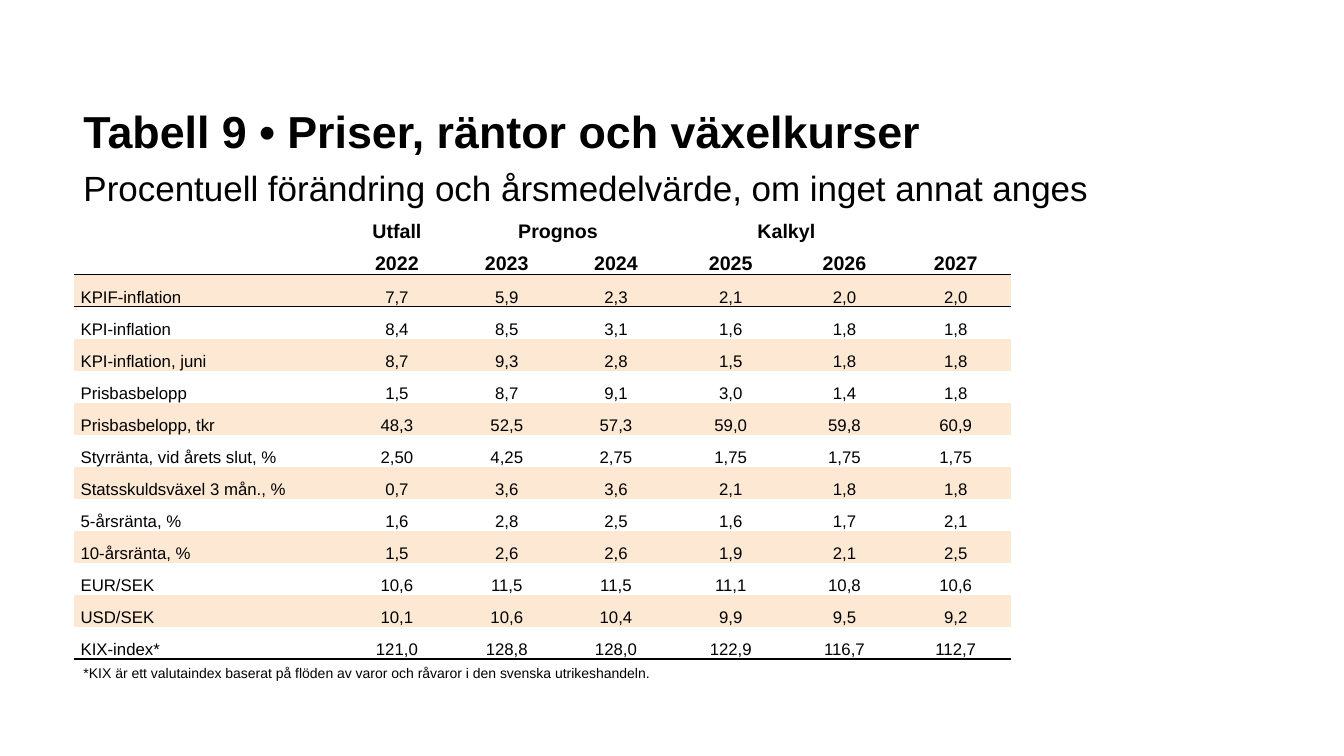
from lxml import etree
from pptx import Presentation
from pptx.dml.color import RGBColor
from pptx.enum import text as te
from pptx.oxml import ns
from pptx.util import Pt

TITLE = "Tabell 9 • Priser, räntor och växelkurser"
SUBTITLE = "Procentuell förändring och årsmedelvärde, om inget annat anges"
FOOTNOTE = ("*KIX är ett valutaindex baserat på flöden av varor och råvaror "
            "i den svenska utrikeshandeln.")
HEADER = [
    ("", "Utfall", "Prognos", "", "Kalkyl", "", ""),
    ("", "2022", "2023", "2024", "2025", "2026", "2027"),
]
BODY = [
    ("KPIF-inflation", "7,7", "5,9", "2,3", "2,1", "2,0", "2,0"),
    ("KPI-inflation", "8,4", "8,5", "3,1", "1,6", "1,8", "1,8"),
    ("KPI-inflation, juni", "8,7", "9,3", "2,8", "1,5", "1,8", "1,8"),
    ("Prisbasbelopp", "1,5", "8,7", "9,1", "3,0", "1,4", "1,8"),
    ("Prisbasbelopp, tkr", "48,3", "52,5", "57,3", "59,0", "59,8", "60,9"),
    ("Styrränta, vid årets slut, %", "2,50", "4,25", "2,75", "1,75", "1,75", "1,75"),
    ("Statsskuldsväxel 3 mån., %", "0,7", "3,6", "3,6", "2,1", "1,8", "1,8"),
    ("5-årsränta, %", "1,6", "2,8", "2,5", "1,6", "1,7", "2,1"),
    ("10-årsränta, %", "1,5", "2,6", "2,6", "1,9", "2,1", "2,5"),
    ("EUR/SEK", "10,6", "11,5", "11,5", "11,1", "10,8", "10,6"),
    ("USD/SEK", "10,1", "10,6", "10,4", "9,9", "9,5", "9,2"),
    ("KIX-index*", "121,0", "128,8", "128,0", "122,9", "116,7", "112,7"),
]
SPANS = (2, 4)  # first column of each two-column heading

BLACK = RGBColor(0, 0, 0)
BAND = RGBColor(0xFD, 0xE9, 0xD3)
FONT = "Arial"
NO_STYLE = "{2D5ABB26-0587-4C30-8999-92F81FD0307C}"

LEFT = 52.56
TABLE_TOP = 150.48
COLUMN_WIDTHS = (190, 82, 75, 81, 83, 79.5, 79.5)
ROW_HEIGHT = 22.89
CELL_MARGIN = 5.04
PROGNOS_MARGIN = 12.8  # wider on the right, moves the heading left


def set_font(font, size, bold=False):
    font.name, font.size, font.bold = FONT, Pt(size), bold
    font.color.rgb = BLACK


def add_rule(cell, side):
    """Draw a 1 pt black border on one side of a cell: "T" or "B"."""
    line = etree.Element(ns.qn(f"a:ln{side}"), w=str(Pt(1)))
    fill = etree.SubElement(line, ns.qn("a:solidFill"))
    etree.SubElement(fill, ns.qn("a:srgbClr"), val=str(BLACK))
    cell._tc.get_or_add_tcPr().insert(0, line)


def add_title(slide):
    frame = slide.shapes.add_textbox(
        Pt(LEFT), Pt(59.04), Pt(756.72), Pt(97.2)).text_frame
    frame.word_wrap = True
    frame.vertical_anchor = te.MSO_ANCHOR.MIDDLE
    heading = frame.paragraphs[0]
    heading.line_spacing = 1.2
    heading.space_after = Pt(4)
    title = heading.add_run()
    title.text = TITLE
    set_font(title.font, 32, True)
    heading.add_line_break()
    subtitle = heading.add_run()
    subtitle.text = SUBTITLE
    set_font(subtitle.font, 25)


def fill_cell(cell, label, row, column):
    is_header = row < len(HEADER)
    cell.margin_left = cell.margin_right = Pt(CELL_MARGIN)
    cell.margin_top = cell.margin_bottom = 0
    if label == "Prognos":
        cell.margin_right = Pt(PROGNOS_MARGIN)
    cell.vertical_anchor = te.MSO_ANCHOR.BOTTOM
    cell.text = label
    paragraph = cell.text_frame.paragraphs[0]
    paragraph.alignment = te.PP_ALIGN.CENTER if column else te.PP_ALIGN.LEFT
    paragraph.line_spacing = Pt(13)
    paragraph.space_before = paragraph.space_after = Pt(1)
    set_font(paragraph.font, 14 if is_header else 12, is_header)
    if not is_header and row % 2 == 0:
        cell.fill.solid()
        cell.fill.fore_color.rgb = BAND
    else:
        cell.fill.background()


def add_forecast_table(slide):
    rows = HEADER + BODY
    table = slide.shapes.add_table(
        len(rows), len(COLUMN_WIDTHS), Pt(LEFT), Pt(TABLE_TOP),
        Pt(sum(COLUMN_WIDTHS)), Pt(ROW_HEIGHT * len(rows))).table
    table.first_row = table.horz_banding = False
    table._tbl.tblPr.find(ns.qn("a:tableStyleId")).text = NO_STYLE
    for column, width in zip(table.columns, COLUMN_WIDTHS):
        column.width = Pt(width)
    for r, labels in enumerate(rows):
        table.rows[r].height = Pt(ROW_HEIGHT)
        for c, label in enumerate(labels):
            fill_cell(table.cell(r, c), label, r, c)
    for first in SPANS:
        table.cell(0, first).merge(table.cell(0, first + 1))
    for c in range(len(COLUMN_WIDTHS)):
        add_rule(table.cell(len(HEADER) - 1, c), "B")
        add_rule(table.cell(len(HEADER), c), "T")
        add_rule(table.cell(len(rows) - 1, c), "B")


def add_footnote(slide):
    frame = slide.shapes.add_textbox(
        Pt(LEFT), Pt(470.88), Pt(424.08), Pt(19.44)).text_frame
    frame.word_wrap = False
    frame.auto_size = te.MSO_AUTO_SIZE.SHAPE_TO_FIT_TEXT
    frame.text = FOOTNOTE
    set_font(frame.paragraphs[0].font, 10)


def main():
    deck = Presentation()
    deck.slide_width, deck.slide_height = Pt(960), Pt(540)
    slide = deck.slides.add_slide(deck.slide_layouts[6])
    add_title(slide)
    add_forecast_table(slide)
    add_footnote(slide)
    deck.save("out.pptx")


if __name__ == "__main__":
    main()
